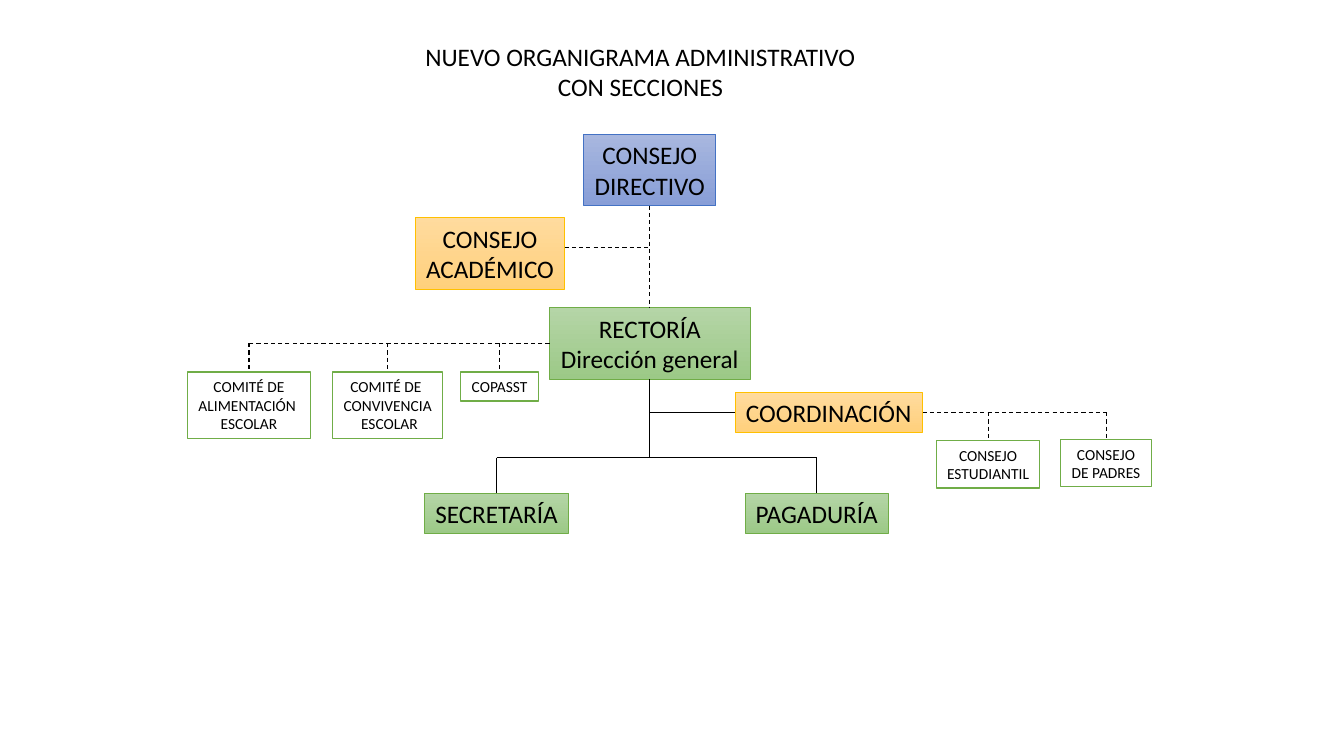
import pptx
import pptx.util
import pptx.dml.color
import pptx.enum.dml
import pptx.enum.shapes
import pptx.enum.text
import pptx.oxml.ns
from lxml import etree

Inches, Pt = pptx.util.Inches, pptx.util.Pt
ALIGN = pptx.enum.text.PP_ALIGN
TOP, LEFT, BOTTOM, RIGHT = range(4)

COLORS = {
    "text": "000000", "white": "FFFFFF",
    "blue_light": "A8B7DF", "blue_dark": "889ED7", "blue_line": "4472C4",
    "green_light": "B5D5A7", "green_dark": "9CC987", "green_line": "70AD47",
    "gold_light": "FFDB9E", "gold_dark": "FFD07C", "gold_line": "FFC000",
}

STYLES = {
    "blue": (("blue_light", "blue_dark"), "blue_line", 0.5, 18),
    "green": (("green_light", "green_dark"), "green_line", 0.5, 18),
    "gold": (("gold_light", "gold_dark"), "gold_line", 0.5, 18),
    "committee": (("white",), "green_line", 1, 11),
}

TITLE = "NUEVO ORGANIGRAMA ADMINISTRATIVO\nCON SECCIONES"
TITLE_AT = (4.12, 0.36, 4.56, 0.71)

UNITS = {
    "directivo": ("CONSEJO\nDIRECTIVO", "blue", (5.79, 1.33, 1.31, 0.71)),
    "rectoria": ("RECTORÍA\nDirección general", "green", (5.45, 3.05, 1.99, 0.71)),
    "academico": ("CONSEJO\nACADÉMICO", "gold", (4.12, 2.16, 1.48, 0.71)),
    "estudiantil": ("CONSEJO\nESTUDIANTIL", "committee", (9.29, 4.37, 1.02, 0.47)),
    "padres": ("CONSEJO\nDE PADRES", "committee", (10.52, 4.36, 0.9, 0.47)),
    "alimentacion": ("COMITÉ DE\nALIMENTACIÓN \nESCOLAR", "committee", (1.86, 3.69, 1.22, 0.66)),
    "convivencia": ("COMITÉ DE \nCONVIVENCIA\n ESCOLAR", "committee", (3.3, 3.69, 1.09, 0.66)),
    "copasst": ("COPASST", "committee", (4.57, 3.69, 0.77, 0.29)),
    "coordinacion": ("COORDINACIÓN", "gold", (7.29, 3.89, 1.86, 0.4)),
    "pagaduria": ("PAGADURÍA", "green", (7.39, 4.89, 1.42, 0.4)),
    "secretaria": ("SECRETARÍA", "green", (4.21, 4.89, 1.43, 0.4)),
}

SIDE_GROUPS = [
    ("rectoria", LEFT, ["alimentacion", "convivencia", "copasst"]),
    ("coordinacion", RIGHT, ["estudiantil", "padres"]),
]
OFFICES = ["secretaria", "pagaduria"]
OFFICE_BUS_Y = Inches(4.54)
ACADEMIC_Y = Inches(2.46)


def rgb(name):
    return pptx.dml.color.RGBColor.from_string(COLORS[name])


def write(s, text, size):
    tf = s.text_frame
    tf.text = text
    tf.word_wrap = False
    tf.auto_size = pptx.enum.text.MSO_AUTO_SIZE.SHAPE_TO_FIT_TEXT
    for p in tf.paragraphs:
        p.alignment = ALIGN.CENTER
        for r in p.runs:
            r.font.name = "Calibri"
            r.font.size = Pt(size)
            r.font.color.rgb = rgb("text")


def add_unit(slide, text, style, at):
    fills, line, width, size = STYLES[style]
    s = slide.shapes.add_shape(pptx.enum.shapes.MSO_SHAPE.RECTANGLE, *map(Inches, at))
    s.shadow.inherit = False
    if len(fills) == 1:
        s.fill.solid()
        s.fill.fore_color.rgb = rgb(fills[0])
    else:
        s.fill.gradient()
        s.fill.gradient_angle = 270
        for stop, name in zip(s.fill.gradient_stops, fills):
            stop.color.rgb = rgb(name)
    s.line.color.rgb = rgb(line)
    s.line.width = Pt(width)
    write(s, text, size)
    return s


def side_point(s, side):
    x, y = s.left + s.width // 2, s.top + s.height // 2
    return {TOP: (x, s.top), LEFT: (s.left, y),
            BOTTOM: (x, s.top + s.height), RIGHT: (s.left + s.width, y)}[side]


def link(slide, start, end, dashed=False):
    ends = [side_point(*e) if hasattr(e[0], "shape_id") else e for e in (start, end)]
    c = slide.shapes.add_connector(pptx.enum.shapes.MSO_CONNECTOR.STRAIGHT, *ends[0], *ends[1])
    if hasattr(start[0], "shape_id"):
        c.begin_connect(*start)
    if hasattr(end[0], "shape_id"):
        c.end_connect(*end)
    c.line.color.rgb = rgb("text")
    c.line.width = Pt(0.75 if dashed else 0.5)
    if dashed:
        c.line.dash_style = pptx.enum.dml.MSO_LINE.DASH
    etree.SubElement(c._element.spPr, pptx.oxml.ns.qn("a:effectLst"))


def main():
    prs = pptx.Presentation()
    prs.slide_width, prs.slide_height = Inches(13.33), Inches(7.5)
    slide = prs.slides.add_slide(prs.slide_layouts[6])

    title = slide.shapes.add_textbox(*map(Inches, TITLE_AT))
    write(title, TITLE, 18)
    title.text_frame.paragraphs[0].alignment = ALIGN.LEFT

    units = {key: add_unit(slide, *unit) for key, unit in UNITS.items()}
    rectoria = units["rectoria"]
    trunk_x = side_point(rectoria, BOTTOM)[0]

    link(slide, (units["directivo"], BOTTOM), (rectoria, TOP), True)
    academic_x = side_point(units["academico"], RIGHT)[0]
    link(slide, (academic_x, ACADEMIC_Y), (trunk_x, ACADEMIC_Y), True)

    for parent, side, children in SIDE_GROUPS:
        bus_y = side_point(units[parent], side)[1]
        xs = [side_point(units[child], TOP)[0] for child in children]
        far_x = min(xs) if side == LEFT else max(xs)
        link(slide, (units[parent], side), (far_x, bus_y), True)
        for child, x in zip(children, xs):
            link(slide, (x, bus_y), (units[child], TOP), True)

    coordinacion = units["coordinacion"]
    link(slide, (trunk_x, side_point(coordinacion, LEFT)[1]), (coordinacion, LEFT))
    link(slide, (rectoria, BOTTOM), (trunk_x, OFFICE_BUS_Y))
    office_xs = [side_point(units[office], TOP)[0] for office in OFFICES]
    link(slide, (office_xs[0], OFFICE_BUS_Y), (office_xs[-1], OFFICE_BUS_Y))
    for office, x in zip(OFFICES, office_xs):
        link(slide, (x, OFFICE_BUS_Y), (units[office], TOP))

    prs.save("out.pptx")


if __name__ == "__main__":
    main()
